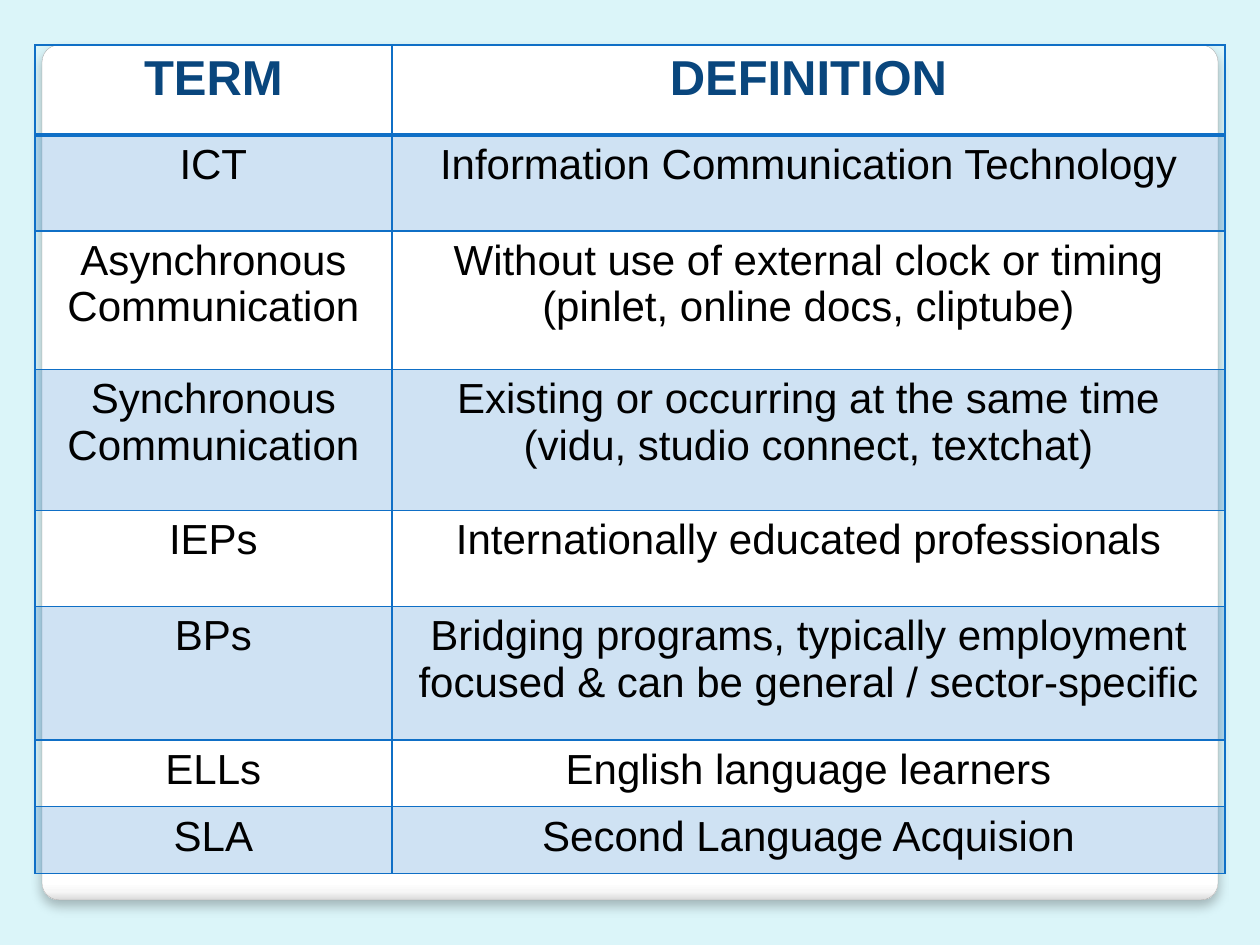
from dataclasses import dataclass

from lxml.etree import SubElement
from pptx import Presentation
from pptx.dml.color import RGBColor
from pptx.enum.shapes import MSO_SHAPE
from pptx.enum.text import PP_ALIGN
from pptx.oxml.ns import qn
from pptx.util import Inches, Pt

GLOSSARY = [
    (2, "TERM", "DEFINITION"),
    (2.13, "ICT", "Information Communication Technology"),
    (3.08, "Asynchronous Communication",
     "Without use of external clock or timing\n(pinlet, online docs, cliptube)"),
    (3.14, "Synchronous Communication",
     "Existing or occurring at the same time\n(vidu, studio connect, textchat)"),
    (2.13, "IEPs", "Internationally educated professionals"),
    (2.97, "BPs",
     "Bridging programs, typically employment focused & can be general / sector-specific"),
    (1.48, "ELLs", "English language learners"),
    (1.48, "SLA", "Second Language Acquision"),
]


@dataclass(frozen=True)
class Theme:
    """Colours, font and type sizes of the slide."""
    background: str = "DBF5F9"
    accent: str = "0F6FC6"
    heading: str = "09467D"
    body: str = "000000"
    panel_line: str = "A4A4A4"
    panel_stops: tuple = ((0, "FFFFFF"), (98, "FFFFFF"), (99, "F7F7F7"), (100, "DADADA"))
    font: str = "Arial"
    heading_size: int = 28
    body_size: int = 24
    band_opacity: int = 20
    shadow_opacity: int = 25


def add_color(parent, color, opacity=100):
    """Append an RGB colour with an opacity in percent."""
    element = SubElement(parent, qn("a:srgbClr"), val=color)
    if opacity < 100:
        SubElement(element, qn("a:alpha"), val=str(opacity * 1000))


def write_text(text_frame, text, *, font, size, color, bold=False):
    """Fill a text frame with centred, formatted paragraphs."""
    text_frame.text = text
    for paragraph in text_frame.paragraphs:
        paragraph.alignment = PP_ALIGN.CENTER
        for run in paragraph.runs:
            run.font.name = font
            run.font.size = Pt(size)
            run.font.bold = bold
            run.font.color.rgb = RGBColor.from_string(color)


class SlideBuilder:
    """Holds the theme and current slide and draws on a 30 by 21 grid."""

    def __init__(self, presentation, theme):
        """Add a blank slide with the theme's background."""
        self.theme = theme
        self.column = presentation.slide_width / 30
        self.row = presentation.slide_height / 21
        self.slide = presentation.slides.add_slide(presentation.slide_layouts[6])
        fill = self.slide.background.fill
        fill.solid()
        fill.fore_color.rgb = RGBColor.from_string(theme.background)

    def box(self, left, top, width, height):
        """Convert grid units to slide lengths."""
        return (round(left * self.column), round(top * self.row),
                round(width * self.column), round(height * self.row))

    def panel(self, left, top, width, height):
        """Draw the rounded panel with a shaded lower edge and soft shadow."""
        shape = self.slide.shapes.add_shape(
            MSO_SHAPE.ROUNDED_RECTANGLE, *self.box(left, top, width, height))
        shape.adjustments[0] = 0.02
        shape.line.color.rgb = RGBColor.from_string(self.theme.panel_line)
        shape.line.width = Pt(0.16)
        shape.fill.gradient()
        shape.fill.gradient_angle = 270
        properties = shape._element.spPr
        stops = properties.find(qn("a:gradFill")).find(qn("a:gsLst"))
        for stop in list(stops):
            stops.remove(stop)
        for position, color in self.theme.panel_stops:
            add_color(SubElement(stops, qn("a:gs"), pos=str(position * 1000)), color)
        shape.shadow.inherit = False
        shadow = SubElement(
            properties.find(qn("a:effectLst")), qn("a:outerShdw"),
            blurRad=str(Pt(6)), dist=str(Pt(4)), dir="5400000",
            algn="t", rotWithShape="0")
        add_color(shadow, self.theme.body, self.theme.shadow_opacity)

    def table(self, left, top, columns, records):
        """Draw a ruled table with a heading row and tinted alternate rows."""
        heights = [record[0] for record in records]
        table = self.slide.shapes.add_table(
            len(records), len(columns),
            *self.box(left, top, sum(columns), sum(heights))).table
        table.first_row = table.horz_banding = False
        for column, width in zip(table.columns, columns):
            column.width = round(width * self.column)
        for index, (height, *texts) in enumerate(records):
            table.rows[index].height = round(height * self.row)
            for cell, text in zip(table.rows[index].cells, texts):
                self.cell(cell, text, index)

    def cell(self, cell, text, index):
        """Format one table cell according to its row index."""
        theme = self.theme
        heading = index == 0
        write_text(cell.text_frame, text, font=theme.font, bold=heading,
                   size=theme.heading_size if heading else theme.body_size,
                   color=theme.heading if heading else theme.body)
        properties = cell._tc.get_or_add_tcPr()
        widths = {"L": 1, "R": 1, "T": 2 if index == 1 else 1, "B": 2 if heading else 1}
        for side, width in widths.items():
            line = SubElement(properties, qn(f"a:ln{side}"), w=str(Pt(width)))
            add_color(SubElement(line, qn("a:solidFill")), theme.accent)
        if index % 2:
            add_color(SubElement(properties, qn("a:solidFill")),
                      theme.accent, theme.band_opacity)
        else:
            SubElement(properties, qn("a:noFill"))


def main():
    """Build and save the glossary slide."""
    presentation = Presentation()
    presentation.slide_width = Inches(10)
    presentation.slide_height = Inches(7.5)
    builder = SlideBuilder(presentation, Theme())
    builder.panel(1, 1, 28, 19)
    builder.table(0.83, 1, (8.5, 19.84), GLOSSARY)
    presentation.save("out.pptx")


if __name__ == "__main__":
    main()
